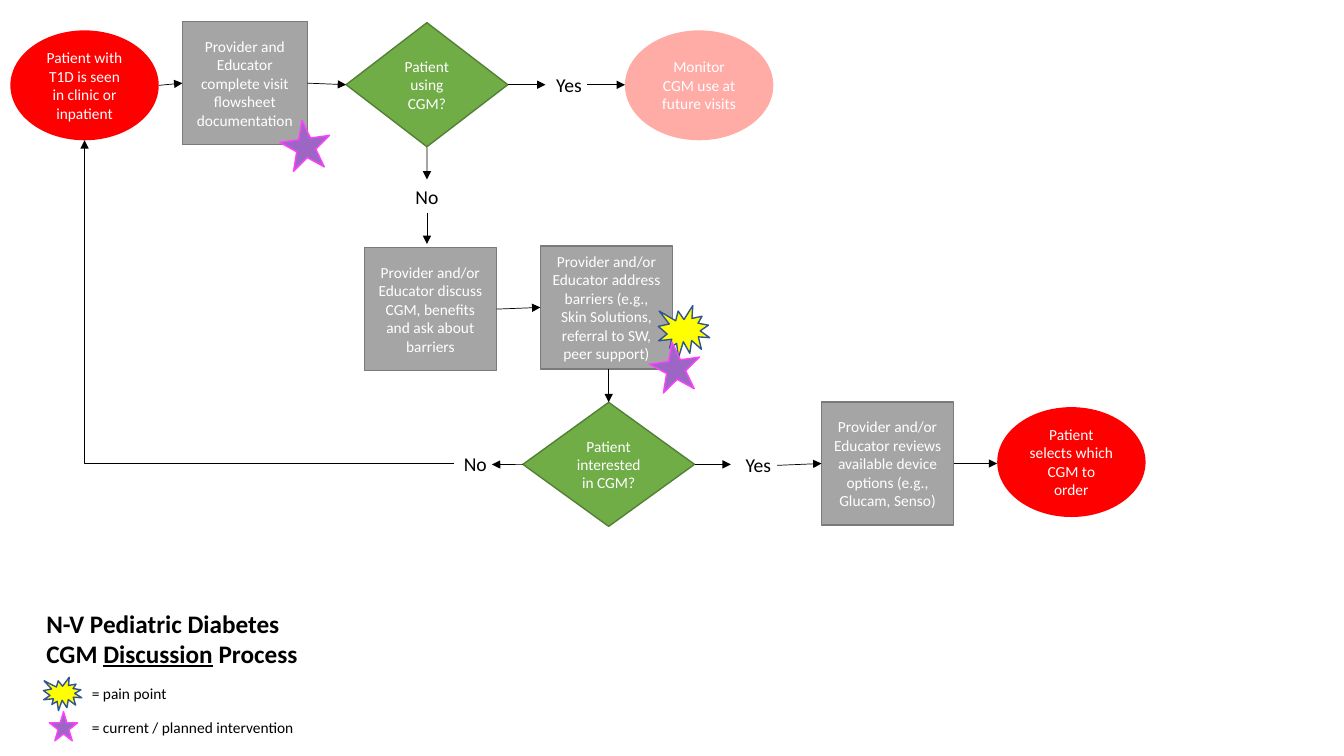
from lxml.etree import SubElement
from pptx import Presentation
from pptx.dml.color import RGBColor
from pptx.enum.shapes import MSO_CONNECTOR, MSO_SHAPE
from pptx.enum.text import MSO_ANCHOR, MSO_AUTO_SIZE, PP_ALIGN
from pptx.oxml.ns import qn
from pptx.util import Pt

TOP, LEFT, BOTTOM, RIGHT = range(4)
SITES = {TOP: (0.5, 0), LEFT: (0, 0.5), BOTTOM: (0.5, 1), RIGHT: (1, 0.5)}


def color(value):
    """Turn a hex string into a colour."""
    return RGBColor.from_string(value)


class FlowSlide:
    """Holds the style of the flow chart and the slide it is drawn on."""

    font = "Calibri"
    black, white = "000000", "FFFFFF"
    gray, gray_edge = "A5A5A5", "7A7A7A"
    green, green_edge = "70AD47", "538035"
    red, pink = "FF0000", "FFACA7"
    yellow, blue_edge = "FFFF00", "325491"
    purple, magenta = "9E66C4", "FF40FF"

    def __init__(self, slide):
        """Remember the slide to draw on."""
        self.slide = slide

    def style_text(self, text_frame, size, ink, align, bold=False):
        """Format every run of a text frame."""
        for paragraph in text_frame.paragraphs:
            paragraph.alignment = align
            for run in paragraph.runs:
                run.font.name = self.font
                run.font.size = Pt(size)
                run.font.bold = bold
                run.font.color.rgb = color(ink)

    def title(self, left, top, width, height):
        """Place the two-line title with its underlined word."""
        shape = self.slide.shapes.title
        shape.left, shape.top, shape.width, shape.height = map(Pt, (left, top, width, height))
        text_frame = shape.text_frame
        text_frame.text = "N-V Pediatric Diabetes"
        text_frame.auto_size = MSO_AUTO_SIZE.NONE
        text_frame.vertical_anchor = MSO_ANCHOR.TOP
        paragraph = text_frame.add_paragraph()
        for words in ("CGM ", "Discussion", " Process"):
            run = paragraph.add_run()
            run.text = words
            run.font.underline = words == "Discussion"
        self.style_text(text_frame, 18, self.black, PP_ALIGN.LEFT, bold=True)

    def shape(self, kind, left, top, width, height, fill, edge=None, text=""):
        """Add a filled preset shape with centred white text."""
        shape = self.slide.shapes.add_shape(kind, *map(Pt, (left, top, width, height)))
        shape.shadow.inherit = False
        shape.fill.solid()
        shape.fill.fore_color.rgb = color(fill)
        if edge:
            shape.line.color.rgb = color(edge)
            shape.line.width = Pt(1)
        else:
            shape.line.fill.background()
        if text:
            text_frame = shape.text_frame
            text_frame.text = text
            text_frame.word_wrap = True
            text_frame.vertical_anchor = MSO_ANCHOR.MIDDLE
            self.style_text(text_frame, 11, self.white, PP_ALIGN.CENTER)
        return shape

    def step(self, left, top, text, width=94.5):
        """Add a gray process box."""
        return self.shape(MSO_SHAPE.RECTANGLE, left, top, width, 88,
                          self.gray, self.gray_edge, text)

    def decision(self, left, top, width, text):
        """Add a green decision diamond."""
        return self.shape(MSO_SHAPE.DIAMOND, left, top, width, 88.6,
                          self.green, self.green_edge, text)

    def terminal(self, left, top, fill, text):
        """Add a start or end ellipse."""
        return self.shape(MSO_SHAPE.OVAL, left, top, 106, 78.5, fill, text=text)

    def burst(self, left, top, width, height):
        """Add a pain point marker."""
        self.shape(MSO_SHAPE.EXPLOSION1, left, top, width, height, self.yellow, self.blue_edge)

    def star(self, left, top, width, height, rotation=0):
        """Add an intervention marker."""
        shape = self.shape(MSO_SHAPE.STAR_5_POINT, left, top, width, height,
                           self.purple, self.magenta)
        shape.rotation = rotation

    def label(self, left, top, width, height, text, size, align):
        """Add a black text box."""
        text_box = self.slide.shapes.add_textbox(*map(Pt, (left, top, width, height)))
        text_frame = text_box.text_frame
        text_frame.text = text
        text_frame.word_wrap = True
        self.style_text(text_frame, size, self.black, align)

    def answer(self, center, top, text):
        """Add the answer that leaves a decision."""
        self.label(center - 18.5, top, 37, 24.2, text, 14, PP_ALIGN.CENTER)

    def legend(self, top, text):
        """Add a line of the legend."""
        self.label(58.5, top, 273.6, 20.6, text, 11, PP_ALIGN.LEFT)

    def finish_line(self, connector):
        """Give a connector its line, arrowhead and no shadow."""
        connector.line.color.rgb = color(self.black)
        connector.line.width = Pt(0.5)
        SubElement(connector.line._get_or_add_ln(), qn("a:tailEnd"), type="triangle")
        SubElement(connector._element.spPr, qn("a:effectLst"))

    def locate(self, end):
        """Find the place of a point or of a (shape, site) pair."""
        first, second = end
        if isinstance(first, (int, float)):
            return Pt(first), Pt(second)
        across, down = SITES[second]
        return int(first.left + first.width * across), int(first.top + first.height * down)

    def arrow(self, start, end):
        """Draw a straight arrow between points or (shape, site) pairs."""
        connector = self.slide.shapes.add_connector(
            MSO_CONNECTOR.STRAIGHT, *self.locate(start), *self.locate(end))
        for place, join in ((start, connector.begin_connect), (end, connector.end_connect)):
            if not isinstance(place[0], (int, float)):
                join(*place)
        self.finish_line(connector)

    def return_arrow(self, left, top, right, bottom):
        """Draw the arrow that runs left along the bottom and then up."""
        connector = self.slide.shapes.add_connector(
            MSO_CONNECTOR.ELBOW, *map(Pt, (left, top, right, bottom)))
        properties = connector._element.spPr
        properties.find(qn("a:prstGeom")).set("prst", "bentConnector2")
        properties.find(qn("a:xfrm")).set("rot", "10800000")
        self.finish_line(connector)


def main():
    """Build the flow chart and save it."""
    presentation = Presentation()
    presentation.slide_width, presentation.slide_height = Pt(960), Pt(540)
    flow = FlowSlide(presentation.slides.add_slide(presentation.slide_layouts[5]))
    flow.title(25.9, 430.6, 273.6, 51)

    flow.terminal(7.4, 21.7, flow.red, "Patient with T1D is seen in clinic or inpatient")
    visit = flow.step(130.3, 15.4, "Provider and Educator complete visit flowsheet documentation",
                      width=89.2)
    using = flow.decision(247.2, 16.2, 115.5, "Patient using CGM?")
    flow.terminal(446.4, 21.7, flow.pink, "Monitor CGM use at future visits")
    discuss = flow.step(260.2, 176.8, "Provider and/or Educator discuss CGM, "
                        "benefits and ask about barriers")
    address = flow.step(386, 175.6, "Provider and/or Educator address barriers "
                        "(e.g., Skin Solutions, referral to SW, peer support)")
    interested = flow.decision(373.5, 287.4, 122.6, "Patient interested in CGM?")
    reviews = flow.step(586.8, 287.1, "Provider and/or Educator reviews available "
                        "device options (e.g., Glucam, Senso)")
    flow.terminal(712.3, 290.8, flow.red, "Patient selects which CGM to order")

    flow.answer(406.4, 48.4, "Yes")
    flow.answer(305, 128.8, "No")
    flow.answer(339.5, 319.4, "No")
    flow.answer(541.7, 320.3, "Yes")

    flow.arrow((113.4, 61), (visit, LEFT))
    flow.arrow((visit, RIGHT), (using, LEFT))
    flow.arrow((using, RIGHT), (389.6, 60.5))
    flow.arrow((419.2, 60.6), (446.4, 60.6))
    flow.arrow((using, BOTTOM), (305, 128.2))
    flow.arrow((305, 151.9), (305, 174.3))
    flow.arrow((discuss, RIGHT), (address, LEFT))
    flow.arrow((434.8, 263.6), (interested, TOP))
    flow.arrow((interested, LEFT), (351.4, 331.8))
    flow.arrow((interested, RIGHT), (522, 331.7))
    flow.arrow((555.1, 332.4), (reviews, LEFT))
    flow.arrow((reviews, RIGHT), (712.3, 331.1))
    flow.return_arrow(60.4, 100.2, 324.3, 331.2)

    flow.star(200.2, 85.7, 36, 35.3, rotation=351.9)
    flow.burst(470.2, 218.2, 36.7, 37.4)
    flow.star(464.4, 244.1, 36, 35.3, rotation=351.9)

    flow.burst(31, 483.8, 27.4, 23.8)
    flow.legend(485.3, "= pain point")
    flow.star(35.3, 508.3, 20.2, 20.9)
    flow.legend(509.5, "= current / planned intervention")

    presentation.save("out.pptx")


if __name__ == "__main__":
    main()
